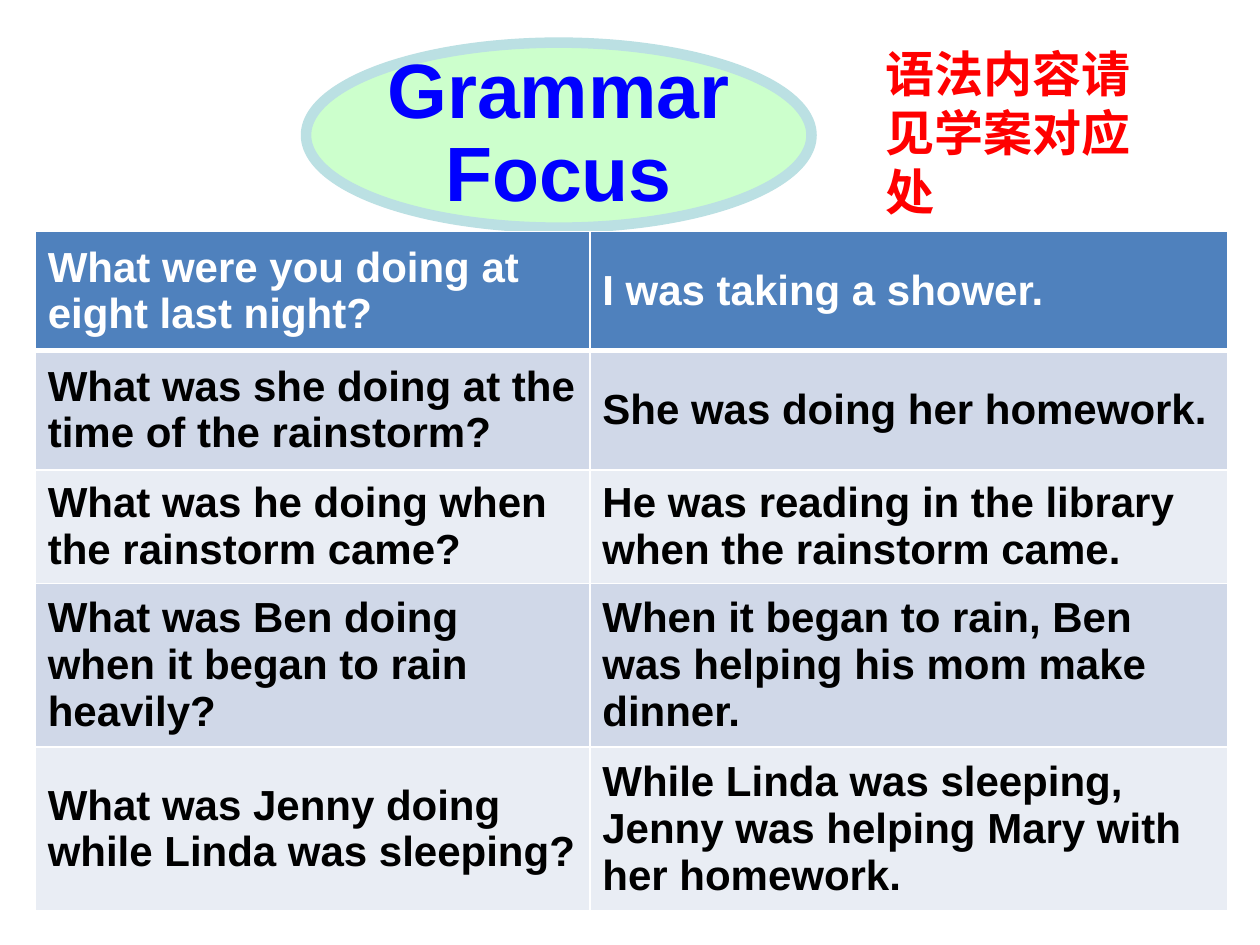
from lxml import etree
from pptx import Presentation, util as u
from pptx.dml.color import RGBColor
from pptx.enum import shapes, text
from pptx.oxml.ns import qn

# Content
TITLE = ["Grammar", "Focus"]
NOTE = "语法内容请见学案对应处"
QUESTIONS = [
    ("What were you doing at eight last night?", "I was taking a shower."),
    ("What was she doing at the time of the rainstorm?", "She was doing her homework."),
    ("What was he doing when the rainstorm came?",
     "He was reading in the library when the rainstorm came."),
    ("What was Ben doing when it began to rain heavily?",
     "When it began to rain, Ben was helping his mom make dinner."),
    ("What was Jenny doing while Linda was sleeping?",
     "While Linda was sleeping, Jenny was helping Mary with her homework."),
]

# Layout in centimetres
COLUMNS = [11.18, 12.85]
ROWS = [2.39, 2.41, 2.29, 3.3, 3.3]
HEADER, BANDS = "4F81BD", ["E9EDF4", "D0D8E8"]


def colour(value):
    return RGBColor.from_string(value)


def place(left, top, width, height):
    return [u.Cm(length) for length in (left, top, width, height)]


def write(para, words, size, ink):
    span = para.add_run()
    span.text = words
    style = {"name": "Arial", "size": u.Pt(size), "bold": True}
    for key, value in style.items():
        setattr(span.font, key, value)
    span.font.color.rgb = colour(ink)


def add_borders(cell, widths):
    properties = cell._tc.get_or_add_tcPr()
    for index, (side, width) in enumerate(widths.items()):
        line = etree.Element(qn(f"a:ln{side}"), w=str(u.Pt(width)))
        fill = etree.SubElement(line, qn("a:solidFill"))
        etree.SubElement(fill, qn("a:srgbClr"), val="FFFFFF")
        properties.insert(index, line)


deck = Presentation()
deck.slide_width, deck.slide_height = u.Cm(25.4), u.Cm(19.05)
page = deck.slides.add_slide(deck.slide_layouts[6])

# Title ellipse
oval = page.shapes.add_shape(shapes.MSO_SHAPE.OVAL, *place(6.17, 0.86, 10.19, 3.73))
oval.shadow.inherit = False
oval.fill.solid()
oval.fill.fore_color.rgb = colour("CCFFCC")
oval.line.color.rgb = colour("BBE0E3")
oval.line.width = u.Pt(6)
frame = oval.text_frame
frame.word_wrap = False
frame.vertical_anchor = text.MSO_ANCHOR.MIDDLE
for number, word in enumerate(TITLE):
    para = frame.add_paragraph() if number else frame.paragraphs[0]
    para.alignment = text.PP_ALIGN.CENTER
    para.line_spacing = 0.9
    write(para, word, 44, "0000FF")

# Question and answer table
table = page.shapes.add_table(
    len(ROWS), len(COLUMNS), *place(0.71, 4.67, sum(COLUMNS), sum(ROWS))).table
for column, width in zip(table.columns, COLUMNS):
    column.width = u.Cm(width)
for number, (row, height, sentences) in enumerate(zip(table.rows, ROWS, QUESTIONS)):
    row.height = u.Cm(height)
    for cell, sentence in zip(row.cells, sentences):
        cell.vertical_anchor = text.MSO_ANCHOR.MIDDLE
        cell.fill.solid()
        cell.fill.fore_color.rgb = colour(BANDS[number % 2] if number else HEADER)
        write(cell.text_frame.paragraphs[0], sentence, 24, "000000" if number else "FFFFFF")
        add_borders(cell, {"L": 1, "R": 1, "T": 3 if number == 1 else 1,
                           "B": 1 if number else 3})

# Note beside the title
box = page.shapes.add_textbox(*place(17.6, 0.76, 5.74, 3.81))
box.text_frame.word_wrap = True
box.text_frame.auto_size = text.MSO_AUTO_SIZE.SHAPE_TO_FIT_TEXT
write(box.text_frame.paragraphs[0], NOTE, 28, "FF0000")

deck.save("out.pptx")
